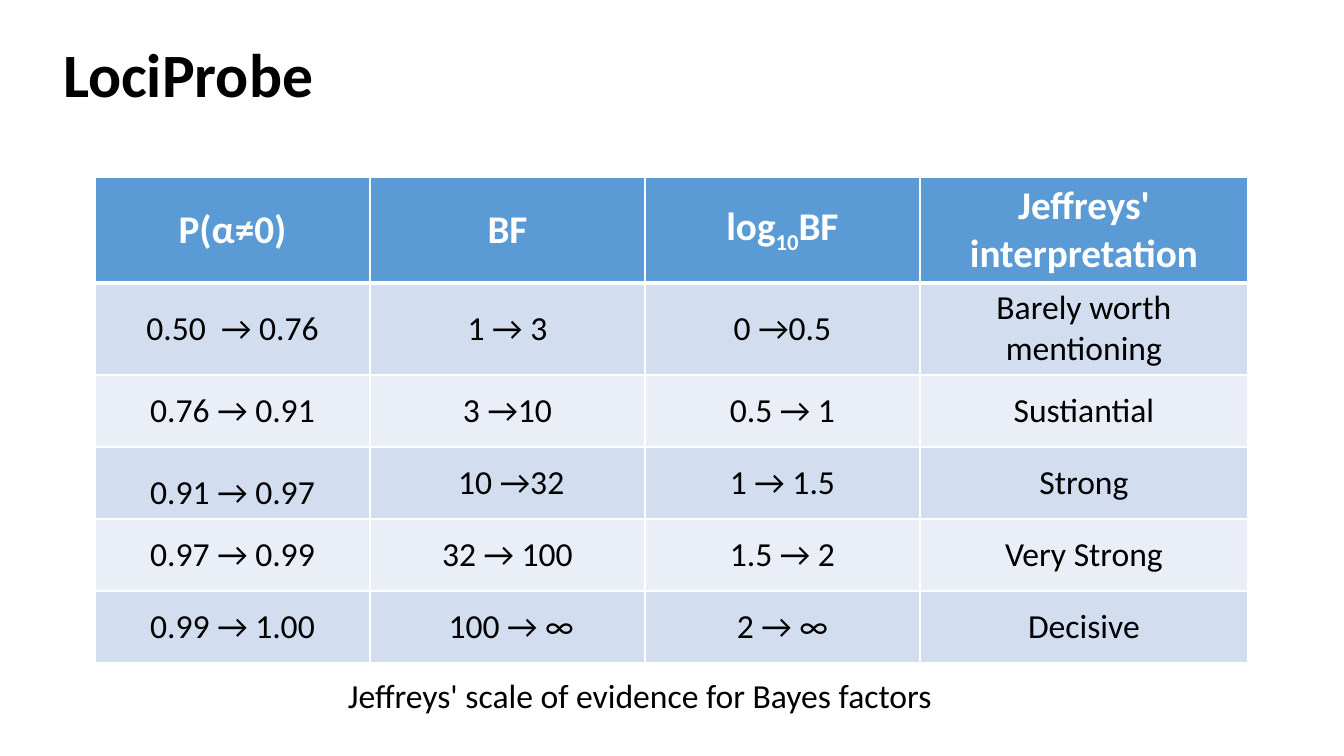
from lxml import etree
from pptx import Presentation
from pptx import util as u
from pptx.dml.color import RGBColor
from pptx.enum import text
from pptx.oxml.ns import qn

BLACK = RGBColor(0, 0, 0)
WHITE = RGBColor(255, 255, 255)
BLUE = RGBColor(0x5B, 0x9B, 0xD5)
BANDS = RGBColor(0xD2, 0xDE, 0xEF), RGBColor(0xEA, 0xEF, 0xF7)
FONT = "Calibri"
LEFT, MID = text.PP_ALIGN.LEFT, text.PP_ALIGN.CENTER

HEAD = ["P(α≠0)", "BF", ("log", "10", "BF"), "Jeffreys' interpretation"]
ROWS = [
    ["0.50  → 0.76", "1 → 3", "0 →0.5", "Barely worth mentioning"],
    ["0.76 → 0.91", "3 →10", "0.5 → 1", "Sustiantial"],
    ["0.91 → 0.97", " 10 →32", "1 → 1.5", "Strong"],
    ["0.97 → 0.99", "32 → 100", "1.5 → 2", "Very Strong"],
    ["0.99 → 1.00", " 100 → ∞", "2 → ∞", "Decisive"],
]
WIDTHS = [275, 275, 275, 328]
HEIGHTS = [104] + [72] * len(ROWS)


def px(n):
    """Turn pixels into EMU."""
    return u.Emu(round(n * 914400 / 100.8))


def write(para, words, size, color, bold=False, align=LEFT):
    """Add one run to a paragraph and return it."""
    para.alignment = align
    run = para.add_run()
    run.text = words
    font = run.font
    font.name, font.size, font.bold = FONT, u.Pt(size), bold
    font.color.rgb = color
    return run


def edge(cell, side, points):
    """Draw one white border of a cell."""
    props = cell._tc.get_or_add_tcPr()
    line = etree.SubElement(props, qn("a:ln" + side), w=str(u.Pt(points)))
    fill = etree.SubElement(line, qn("a:solidFill"))
    etree.SubElement(fill, qn("a:srgbClr"), val=str(WHITE))


def add_title(slide, box):
    """Place the slide title in its placeholder."""
    title = slide.shapes.title
    title.left, title.top, title.width, title.height = map(px, box)
    frame = title.text_frame
    frame.auto_size = text.MSO_AUTO_SIZE.NONE
    frame.vertical_anchor = text.MSO_ANCHOR.MIDDLE
    para = frame.paragraphs[0]
    para.line_spacing = 0.9
    write(para, "LociProbe", 44, BLACK, True)


def fill_cell(cell, words, row):
    """Fill and frame one cell of the scale."""
    head = row == 0
    for side, points in zip("LRTB", (1, 1, 3 if row == 1 else 1, 3 if head else 1)):
        edge(cell, side, points)
    cell.fill.solid()
    cell.fill.fore_color.rgb = BLUE if head else BANDS[(row - 1) % 2]
    cell.vertical_anchor = text.MSO_ANCHOR.MIDDLE
    parts = [words] if isinstance(words, str) else words
    size, color = (28, WHITE) if head else (24, BLACK)
    for i, part in enumerate(parts):
        run = write(cell.text_frame.paragraphs[0], part, size, color, head, MID)
        if i == 1:
            run._r.get_or_add_rPr().set("baseline", "-25000")


def add_scale(slide, left, top):
    """Place the table of Bayes factors."""
    box = map(px, (left, top, sum(WIDTHS), sum(HEIGHTS)))
    table = slide.shapes.add_table(len(HEIGHTS), len(WIDTHS), *box).table
    for col, wide in zip(table.columns, WIDTHS):
        col.width = px(wide)
    for r, (high, words) in enumerate(zip(HEIGHTS, [HEAD] + ROWS)):
        table.rows[r].height = px(high)
        for c, word in enumerate(words):
            fill_cell(table.cell(r, c), word, r)
    table.cell(3, 0).vertical_anchor = text.MSO_ANCHOR.BOTTOM


def add_note(slide, box):
    """Place the caption below the table."""
    frame = slide.shapes.add_textbox(*map(px, box)).text_frame
    frame.word_wrap = True
    frame.auto_size = text.MSO_AUTO_SIZE.SHAPE_TO_FIT_TEXT
    write(frame.paragraphs[0], "Jeffreys' scale of evidence for Bayes factors", 24, BLACK)


def main():
    """Build the slide and save it."""
    deck = Presentation()
    deck.slide_width, deck.slide_height = px(1344), px(756)
    slide = deck.slides.add_slide(deck.slide_layouts[5])
    add_title(slide, (53, 25, 524, 105))
    add_scale(slide, 95, 177)
    add_note(slide, (338, 670, 669, 50))
    deck.save("out.pptx")


if __name__ == "__main__":
    main()
